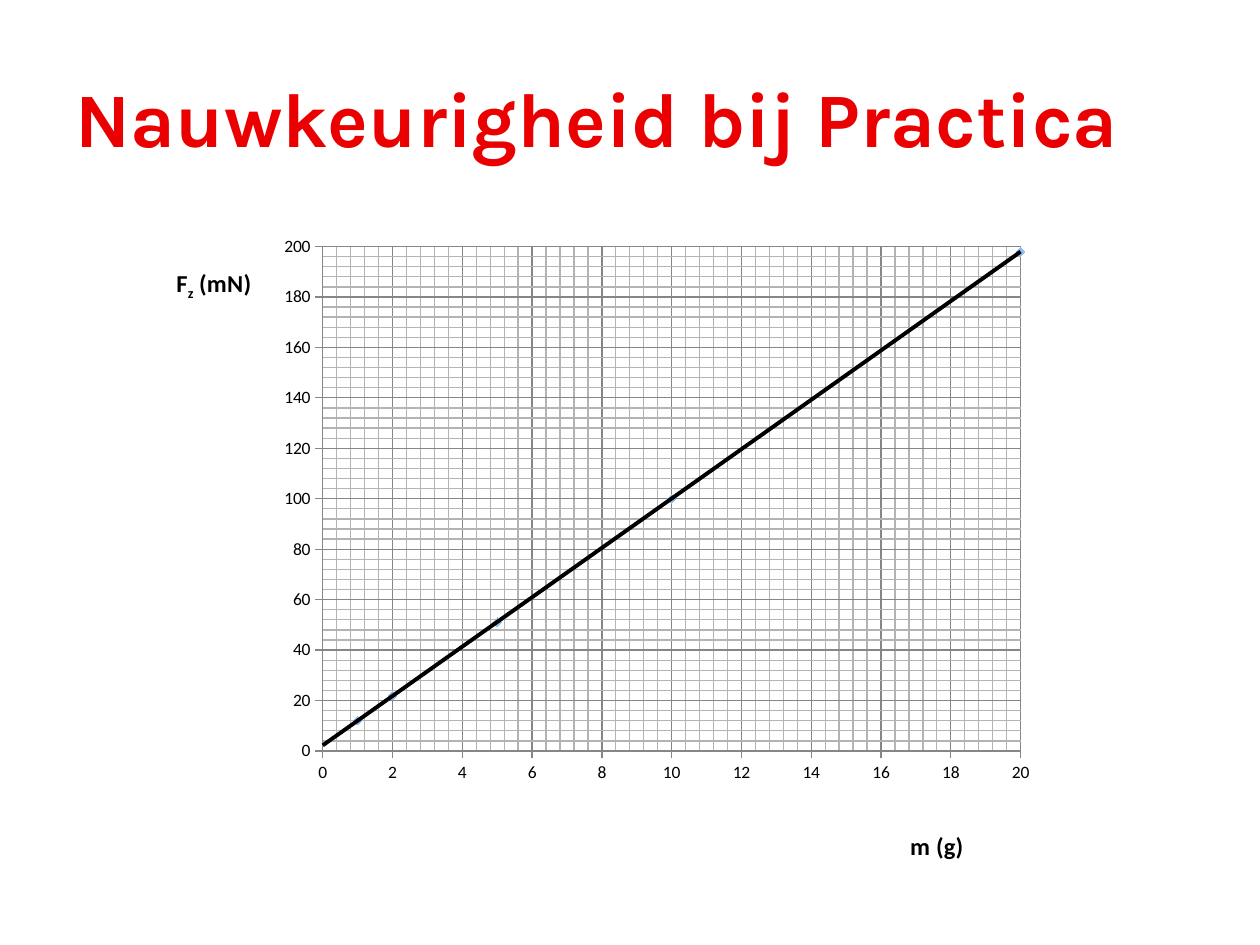
from pptx import Presentation
from pptx.chart.data import XyChartData
from pptx.dml.color import RGBColor
from pptx.enum.chart import XL_CHART_TYPE, XL_MARKER_STYLE, XL_TICK_MARK
from pptx.enum.text import MSO_ANCHOR, PP_ALIGN
from pptx.oxml import parse_xml
from pptx.oxml.ns import nsdecls
from pptx.util import Cm, Pt

MASSES = (1, 2, 5, 10, 20)
FORCES = (12, 22, 51, 100, 198)
BLACK = "000000"
MAJOR_GRID = "868686"
MINOR_GRID = "B3B3B3"
MARKER_BLUE = "8DBEF0"
TITLE_RED = "EA0000"


def color(hex_code):
    return RGBColor.from_string(hex_code)


def add_text(paragraph, text, font="Calibri", size=14, hex_code=BLACK, bold=True):
    run = paragraph.add_run()
    run.text = text
    run.font.name = font
    run.font.size = Pt(size)
    run.font.bold = bold
    run.font.color.rgb = color(hex_code)
    return run


def set_line(line, hex_code, width):
    line.color.rgb = color(hex_code)
    line.width = Pt(width)


def line_xml(hex_code, width):
    """Shape properties with one solid line, for parts without a line object."""
    return (f'<c:spPr {nsdecls("c", "a")}><a:ln w="{Pt(width)}"><a:solidFill>'
            f'<a:srgbClr val="{hex_code}"/></a:solidFill></a:ln></c:spPr>')


def set_layout(layout, inner=False, **fractions):
    """Place a chart part by fractions (x, y, w, h) of the chart's size."""
    target = '<c:layoutTarget val="inner"/>' if inner else ""
    modes = "".join(f'<c:{key}Mode val="edge"/>' for key in ("x", "y"))
    values = "".join(f'<c:{key} val="{value}"/>' for key, value in fractions.items())
    layout.append(parse_xml(
        f'<c:manualLayout {nsdecls("c")}>{target}{modes}{values}</c:manualLayout>'))


def add_title(slide, left, top, width, height):
    title = slide.shapes.title
    title.left, title.top, title.width, title.height = left, top, width, height
    frame = title.text_frame
    frame.vertical_anchor = MSO_ANCHOR.MIDDLE
    frame.paragraphs[0].alignment = PP_ALIGN.LEFT
    add_text(frame.paragraphs[0], "Nauwkeurigheid bij Practica",
             font="Karla", size=44, hex_code=TITLE_RED)


def format_axis(axis, maximum, title_parts, x, y):
    """Scale an axis in ten major steps of five minor steps and title it."""
    axis.minimum_scale, axis.maximum_scale = 0, maximum
    axis.major_unit, axis.minor_unit = maximum / 10, maximum / 50
    axis.major_tick_mark = XL_TICK_MARK.OUTSIDE
    axis.minor_tick_mark = XL_TICK_MARK.NONE
    axis.has_major_gridlines = axis.has_minor_gridlines = True
    set_line(axis.major_gridlines.format.line, MAJOR_GRID, 0.75)
    set_line(axis.format.line, MAJOR_GRID, 0.75)
    axis.tick_labels.number_format = "0"
    axis.tick_labels.number_format_is_linked = False

    frame = axis.axis_title.text_frame
    runs = [add_text(frame.paragraphs[0], part) for part in title_parts]
    if len(runs) > 1:
        runs[1].font._element.set("baseline", "-25000")
    title = axis.axis_title.element
    title.xpath(".//a:bodyPr")[0].set("rot", "0")
    set_layout(title.xpath("c:layout")[0], x=x, y=y)
    minor_gridlines = title.getparent().xpath("c:minorGridlines")[0]
    minor_gridlines.append(parse_xml(line_xml(MINOR_GRID, 0.75)))


def add_trend_line(series_element):
    trend_line = parse_xml(
        f'<c:trendline {nsdecls("c")}>{line_xml(BLACK, 2.25)}'
        '<c:trendlineType val="linear"/><c:backward val="1"/>'
        '<c:dispRSqr val="0"/><c:dispEq val="0"/></c:trendline>')
    series_element.xpath("c:xVal")[0].addprevious(trend_line)


def add_force_chart(slide, left, top, width, height):
    data = XyChartData()
    points = data.add_series("Series 1")
    for mass, force in zip(MASSES, FORCES):
        points.add_data_point(mass, force)
    chart = slide.shapes.add_chart(
        XL_CHART_TYPE.XY_SCATTER, left, top, width, height, data).chart
    chart.has_legend = False
    chart.has_title = False
    chart.font.name = "Calibri"
    chart.font.size = Pt(10)
    chart.font.color.rgb = color(BLACK)
    chart.plots[0].vary_by_categories = False

    series = chart.plots[0].series[0]
    series.smooth = False
    series.format.line.fill.background()
    series.marker.style = XL_MARKER_STYLE.DIAMOND
    series.marker.size = 5
    series.marker.format.fill.solid()
    series.marker.format.fill.fore_color.rgb = color(MARKER_BLUE)
    series.marker.format.line.fill.background()
    add_trend_line(chart.element.xpath(".//c:ser")[0])

    format_axis(chart.category_axis, 20, ["m (g)"], x=0.84, y=0.94)
    format_axis(chart.value_axis, 200, ["F", "z", " (mN)"], x=0.01, y=0.06)

    plot_area = chart.element.xpath(".//c:plotArea")[0]
    if not plot_area.xpath("c:layout"):
        plot_area.insert(0, parse_xml(f'<c:layout {nsdecls("c")}/>'))
    set_layout(plot_area.xpath("c:layout")[0], inner=True,
               x=0.18, y=0.035, w=0.79, h=0.79)


def main():
    presentation = Presentation()
    presentation.slide_width, presentation.slide_height = Cm(25.4), Cm(19.05)
    slide = presentation.slides.add_slide(presentation.slide_layouts[5])
    slide.background.fill.solid()
    slide.background.fill.fore_color.rgb = color("FFFFFF")
    add_title(slide, Cm(1.27), Cm(0.76), Cm(22.86), Cm(3.18))
    add_force_chart(slide, Cm(3.3), Cm(4.52), Cm(17.81), Cm(13))
    presentation.save("out.pptx")


if __name__ == "__main__":
    main()
